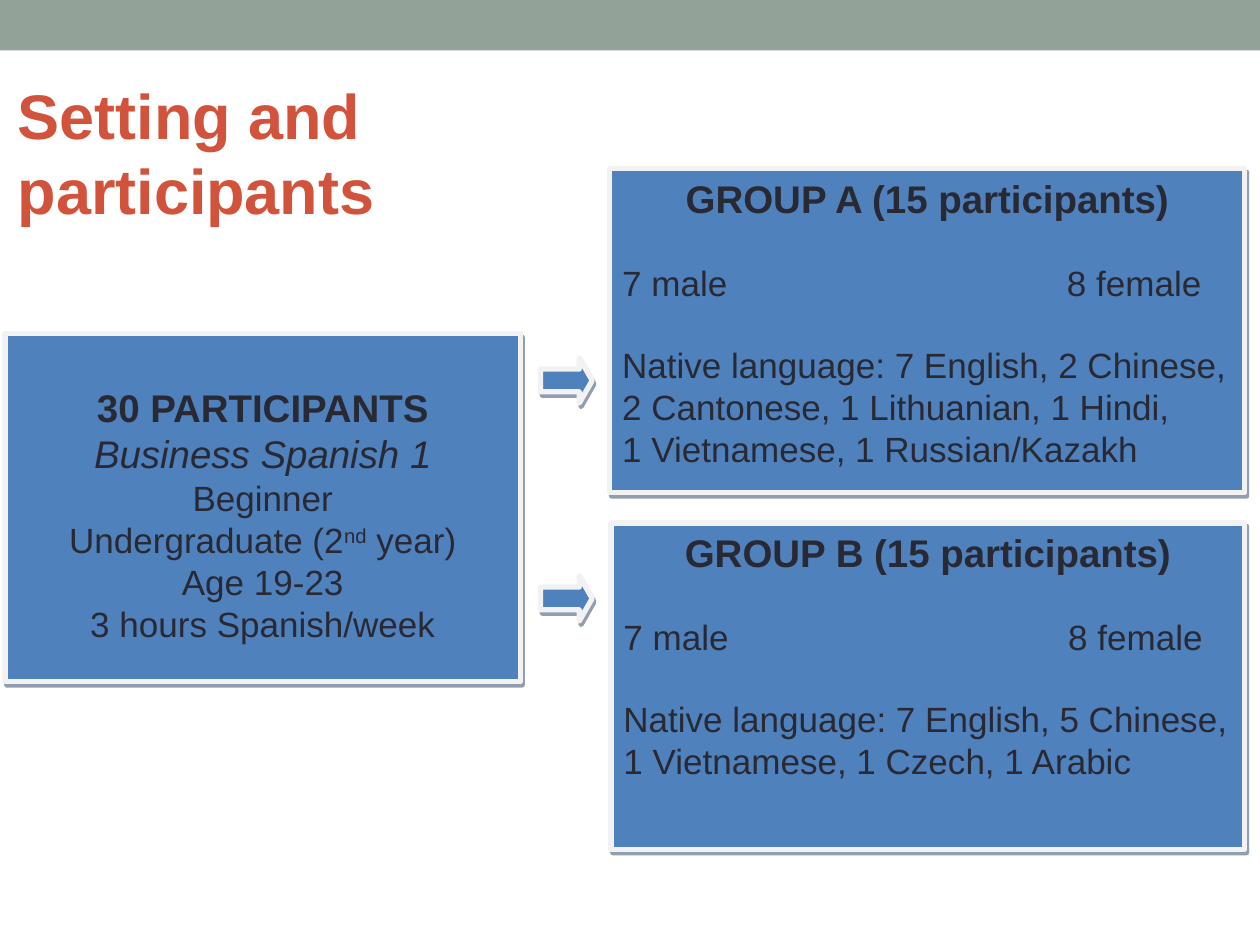
import pptx
from lxml import etree
from pptx.dml.color import RGBColor
from pptx.enum.shapes import MSO_SHAPE
from pptx.enum.text import MSO_ANCHOR, PP_ALIGN
from pptx.oxml.ns import qn
from pptx.util import Inches, Pt

SAGE = RGBColor(0x93, 0xA2, 0x99)
BLUE = RGBColor(0x4F, 0x81, 0xBD)
PALE = RGBColor(0xF2, 0xF2, 0xF2)
INK = RGBColor(0x29, 0x29, 0x34)
RED = RGBColor(0xD2, 0x53, 0x3C)
SHADOW = "243F60"
FONT = "Arial"

# Content: lines are (text, style); ^ encloses superscript
TITLE = "Setting and participants"
CLASS_LINES = [
    ("30 PARTICIPANTS", "heading"),
    ("Business Spanish 1", "course"),
    ("Beginner", "centered"),
    ("Undergraduate (2^nd^ year)", "centered"),
    ("Age 19-23", "centered"),
    ("3 hours Spanish/week", "centered"),
]
GROUP_A = [
    ("GROUP A (15 participants)", "heading"),
    ("7 male\t8 female", "spaced"),
    ("Native language: 7 English, 2 Chinese, 2 Cantonese, 1 Lithuanian, 1 Hindi,", "spaced"),
    ("1 Vietnamese, 1 Russian/Kazakh", "plain"),
]
GROUP_B = [
    ("GROUP B (15 participants)", "heading"),
    ("7 male\t8 female", "spaced"),
    ("Native language: 7 English, 5 Chinese, 1 Vietnamese, 1 Czech, 1 Arabic", "spaced"),
]

# style: size, bold, italic, alignment, space before
STYLES = {
    "heading": (22, True, False, PP_ALIGN.CENTER, 0),
    "course": (22, False, True, PP_ALIGN.CENTER, 0),
    "centered": (20, False, False, PP_ALIGN.CENTER, 0),
    "spaced": (20, False, False, PP_ALIGN.LEFT, 23),
    "plain": (20, False, False, PP_ALIGN.LEFT, 0),
}

# Boxes: left, top, width, height, top inset, lines
BOXES = [
    (0.04, 2.65, 4.09, 2.76, 0.4, CLASS_LINES),
    (4.84, 1.34, 5.04, 2.57, 0.05, GROUP_A),
    (4.85, 4.15, 5.03, 2.59, 0.05, GROUP_B),
]
ARROW_TOPS = [2.84, 4.57]
FEMALE_TAB = 3.53


def set_font(font, size, color, bold=False, italic=False):
    font.name, font.size = FONT, Pt(size)
    font.bold, font.italic = bold, italic
    font.color.rgb = color


def add_shadow(sp):
    sp.shadow.inherit = False
    effects = sp._element.spPr.find(qn("a:effectLst"))
    outer = etree.SubElement(effects, qn("a:outerShdw"), blurRad="0",
                             dist=str(Pt(2.2)), dir=str(63 * 60000),
                             algn="ctr", rotWithShape="0")
    color = etree.SubElement(outer, qn("a:srgbClr"), val=SHADOW)
    etree.SubElement(color, qn("a:alpha"), val="50000")


def add_framed(s, kind, *place):
    sp = s.shapes.add_shape(kind, *map(Inches, place))
    sp.fill.solid()
    sp.fill.fore_color.rgb = BLUE
    sp.line.color.rgb = PALE
    sp.line.width = Pt(3)
    add_shadow(sp)
    return sp


def write_line(p, text, style):
    size, bold, italic, align, before = STYLES[style]
    p.alignment = align
    p.space_before = Pt(before)
    if "\t" in text:
        tabs = etree.SubElement(p._p.get_or_add_pPr(), qn("a:tabLst"))
        etree.SubElement(tabs, qn("a:tab"), pos=str(Inches(FEMALE_TAB)), algn="l")
    set_font(p.font, size, INK, bold, italic)
    for i, part in enumerate(text.split("^")):
        r = p.add_run()
        r.text = part
        r.font.color.rgb = INK
        if i % 2:
            r._r.get_or_add_rPr().set("baseline", "30000")


prs = pptx.Presentation()
prs.slide_width, prs.slide_height = Inches(10), Inches(7.5)
s = prs.slides.add_slide(prs.slide_layouts[5])

# Top band
band = s.shapes.add_shape(MSO_SHAPE.RECTANGLE, 0, 0, prs.slide_width, Inches(0.4))
band.shadow.inherit = False
band.fill.solid()
band.fill.fore_color.rgb = SAGE
band.line.fill.background()

# Title
title = s.shapes.title
title.left, title.top = Inches(0.04), Inches(0.55)
title.width, title.height = Inches(3.62), Inches(1.31)
tf = title.text_frame
tf.text = TITLE
tf.word_wrap = True
tf.vertical_anchor = MSO_ANCHOR.MIDDLE
tf.paragraphs[0].alignment = PP_ALIGN.LEFT
set_font(tf.paragraphs[0].font, 36, RED, bold=True)

# Class and group boxes
for left, top, width, height, inset, lines in BOXES:
    sp = add_framed(s, MSO_SHAPE.FLOWCHART_PROCESS, left, top, width, height)
    tf = sp.text_frame
    tf.word_wrap = True
    tf.vertical_anchor = MSO_ANCHOR.TOP
    tf.margin_top = Inches(inset)
    for i, (text, style) in enumerate(lines):
        p = tf.add_paragraph() if i else tf.paragraphs[0]
        write_line(p, text, style)

# Arrows from the class to each group
for top in ARROW_TOPS:
    arrow = add_framed(s, MSO_SHAPE.RIGHT_ARROW, 4.29, top, 0.41, 0.36)
    arrow.adjustments[1] = 0.285

prs.save("out.pptx")
